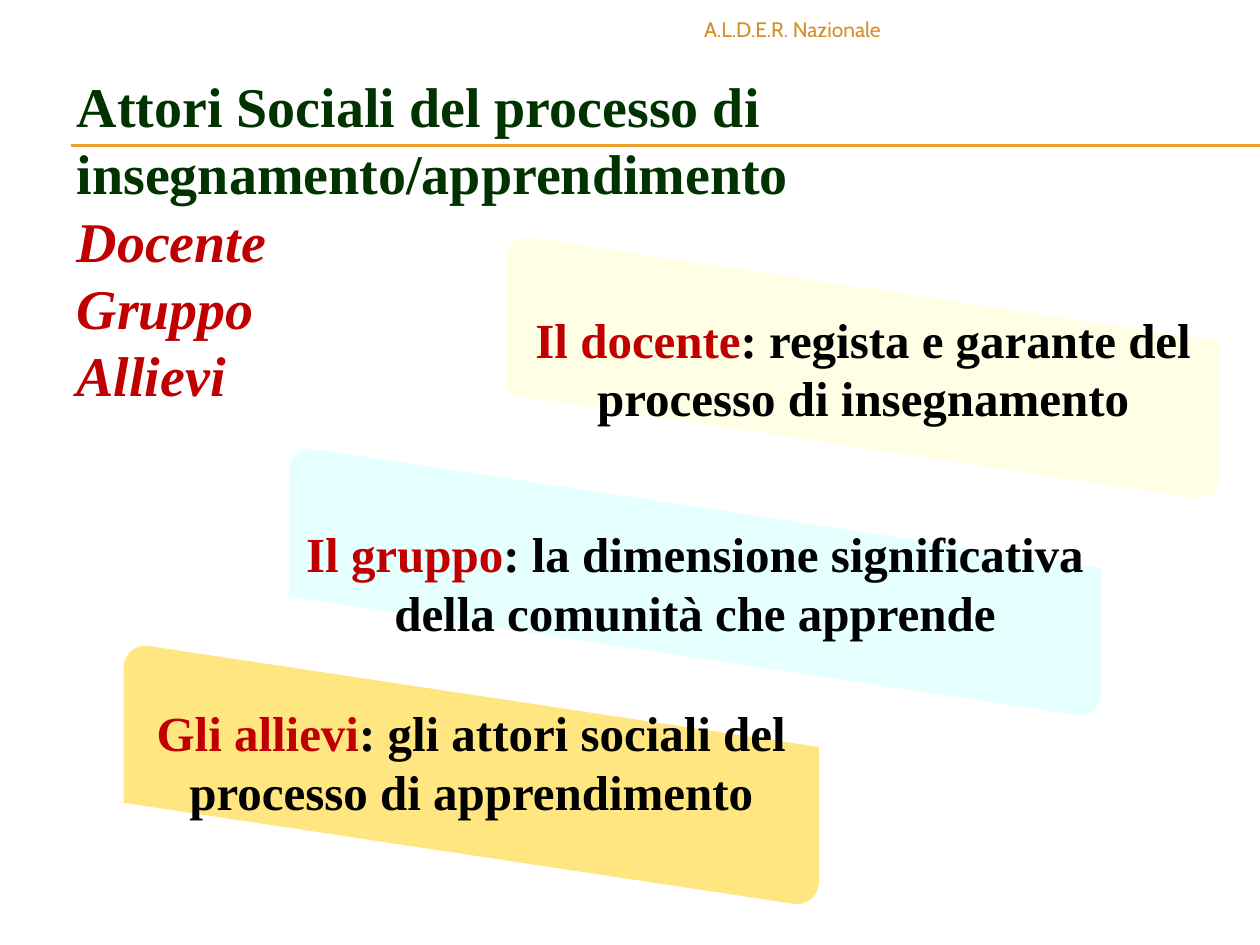
import math

import pptx
import pptx.dml.color
import pptx.enum.shapes
import pptx.enum.text
import pptx.oxml
import pptx.util

ALIGN = pptx.enum.text.PP_ALIGN
ANCHOR = pptx.enum.text.MSO_ANCHOR
SERIF = "Times New Roman"
GREEN, RED, BLACK, GOLD = "003300", "C00000", "000000", "F0A22E"

# Content
HEADER = "A.L.D.E.R. Nazionale"
TITLE = "Attori Sociali del processo di insegnamento/apprendimento"
ACTORS = ["Docente", "Gruppo", "Allievi"]
# actor, role, fill, flat panel (left, top, width, height), bottom inset
PANELS = [
    ("Il docente", ": regista e garante del processo di insegnamento",
     "FFFFE6", (3.7, 2.25, 6.3, 1.34), 0.05),
    ("Il gruppo", ": la dimensione significativa della comunità che apprende",
     "E6FFFF", (1.93, 3.99, 7.17, 1.26), 0.05),
    ("Gli allievi", ": gli attori sociali del processo di apprendimento",
     "FFE680", (0.67, 5.48, 6.14, 1.34), 0.27),
]
RULE_LEFT, RULE_TOPS = 0.56, (1.15, 1.16)

# Panels are turned about both axes, which slants them
TURN, TILT = math.radians(26), math.radians(18)
ARC_STEPS = 12


def color(value):
    return pptx.dml.color.RGBColor.from_string(value)


def add_run(paragraph, text, size=28, font=SERIF, fill=BLACK, bold=True, italic=False):
    run = paragraph.add_run()
    run.text = text
    run.font.size = pptx.util.Pt(size)
    run.font.name = font
    run.font.color.rgb = color(fill)
    run.font.bold = bold
    run.font.italic = italic


def add_text_box(left, top, width, height):
    box = slide.shapes.add_textbox(*map(pptx.util.Inches, (left, top, width, height)))
    box.text_frame.word_wrap = True
    return box.text_frame


def add_rule(top):
    start, end, level = map(pptx.util.Inches, (RULE_LEFT, 10, top))
    rule = slide.shapes.add_connector(
        pptx.enum.shapes.MSO_CONNECTOR.STRAIGHT, start, level, end, level)
    rule.line.color.rgb = color(GOLD)
    rule.line.width = pptx.util.Pt(0.75)
    rule._element.spPr.append(pptx.oxml.parse_xml(
        '<a:effectLst xmlns:a="http://schemas.openxmlformats.org/drawingml/2006/main"/>'))


def slanted_outline(left, top, width, height):
    """Rectangle with two opposite round corners, turned and tilted about its centre."""
    half_width, half_height, radius = width / 2, height / 2, height / 6
    arc = []
    for step in range(ARC_STEPS + 1):
        angle = math.pi / 2 * step / ARC_STEPS
        arc.append((-half_width + radius * (1 - math.cos(angle)),
                    -half_height + radius * (1 - math.sin(angle))))
    half = arc + [(half_width, -half_height)]
    flat = half + [(-x, -y) for x, y in half]
    return [(left + half_width + x * math.cos(TURN),
             top + half_height + x * math.sin(TURN) * math.sin(TILT) + y * math.cos(TILT))
            for x, y in flat]


def add_panel(actor, role, fill, area, bottom_inset):
    points = [tuple(map(pptx.util.Inches, point)) for point in slanted_outline(*area)]
    builder = slide.shapes.build_freeform(*points[0])
    builder.add_line_segments(points[1:], close=True)
    panel = builder.convert_to_shape()
    panel.shadow.inherit = False
    panel.fill.solid()
    panel.fill.fore_color.rgb = color(fill)
    panel.line.fill.background()
    frame = panel.text_frame
    frame.word_wrap = True
    frame.vertical_anchor = ANCHOR.MIDDLE
    frame.margin_left = frame.margin_right = pptx.util.Inches(0.05)
    frame.margin_bottom = pptx.util.Inches(bottom_inset)
    paragraph = frame.paragraphs[0]
    paragraph.alignment = ALIGN.CENTER
    add_run(paragraph, actor, fill=RED)
    add_run(paragraph, role)


presentation = pptx.Presentation()
presentation.slide_width = pptx.util.Inches(10)
presentation.slide_height = pptx.util.Inches(7.5)
slide = presentation.slides.add_slide(presentation.slide_layouts[6])

# Double rule behind the title
for rule_top in RULE_TOPS:
    add_rule(rule_top)

# Header
header = add_text_box(3.92, 0.08, 3.17, 0.32).paragraphs[0]
header.alignment = ALIGN.RIGHT
add_run(header, HEADER, size=12, font="Cabin", fill="D48F29", bold=False)

# Title and actors
title_frame = add_text_box(0.51, 0.52, 5.9, 2.77)
for index, line in enumerate([TITLE] + ACTORS):
    paragraph = title_frame.add_paragraph() if index else title_frame.paragraphs[0]
    add_run(paragraph, line, size=32, fill=RED if index else GREEN, italic=index > 0)

# Slanted panels
for panel_content in PANELS:
    add_panel(*panel_content)

presentation.save("out.pptx")
